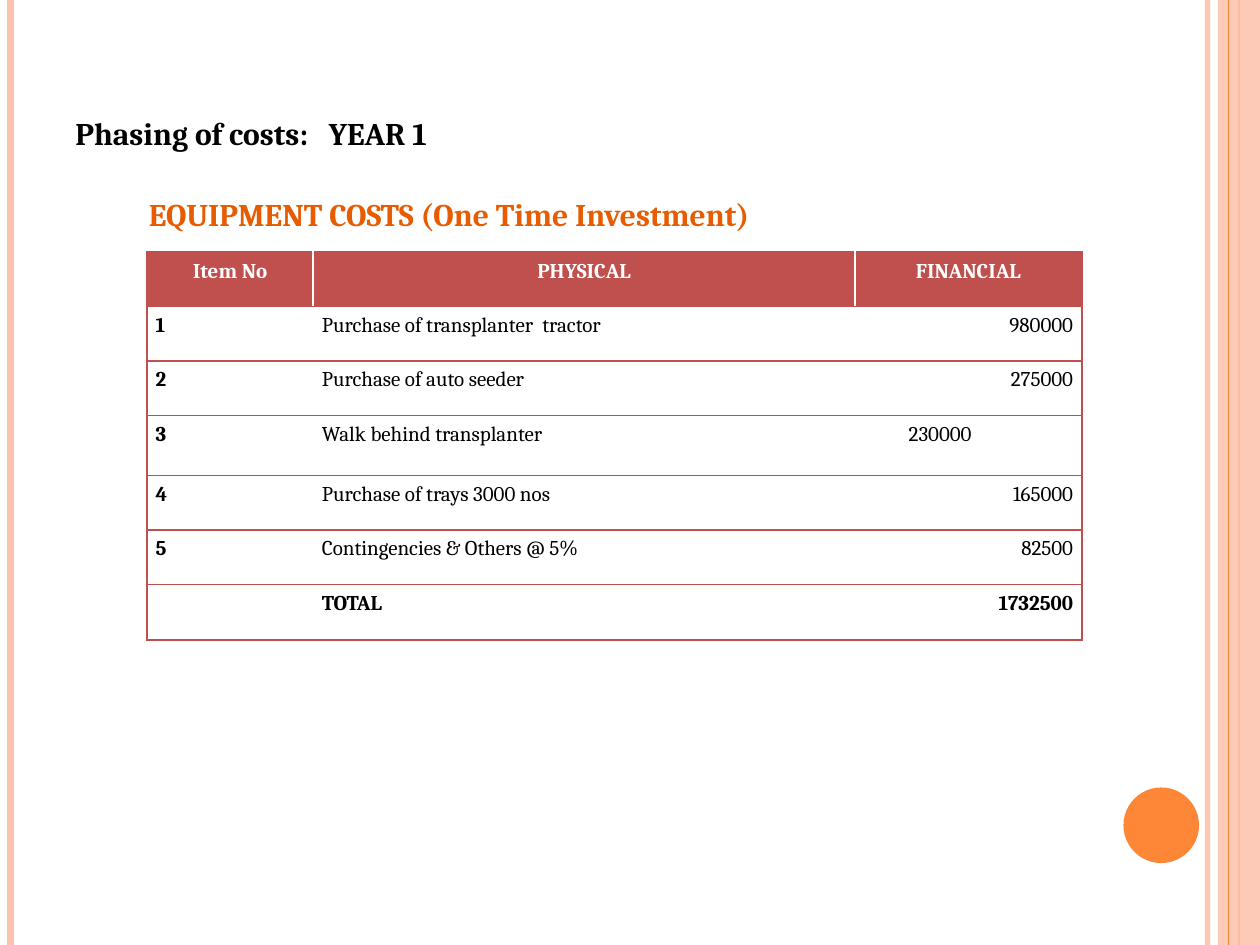
from dataclasses import dataclass

from lxml import etree
from pptx import Presentation
from pptx import util as u
from pptx.dml.color import RGBColor
from pptx.enum import shapes, text
from pptx.oxml import ns

Pt = u.Pt
ALIGN = text.PP_ALIGN


@dataclass(frozen=True)
class Theme:
    font: str = "Cambria"
    heading_size: float = 18
    table_size: float = 12
    black: str = "000000"
    white: str = "FFFFFF"
    peach: str = "FEC3AE"
    orange: str = "FE8637"
    dark_orange: str = "E75C01"
    red: str = "C0504D"


THEME = Theme()
SLIDE_WIDTH, SLIDE_HEIGHT = 720, 540
HEADER = ("Item No", "PHYSICAL", "FINANCIAL")
COSTS = (
    ("1", "Purchase of transplanter  tractor", "980000"),
    ("2", "Purchase of auto seeder", "275000"),
    ("3", "Walk behind transplanter", "230000"),
    ("4", "Purchase of trays 3000 nos", "165000"),
    ("5", "Contingencies & Others @ 5%", "82500"),
    ("", "TOTAL", "1732500"),
)
COLUMN_WIDTHS = (95, 309.6, 129.6)
ROW_HEIGHTS = (31.1, 31.1, 31.1, 34.4, 31.1, 31.1, 32)
INDENTED_AMOUNT = "230000"


def add_run(para, words, size, color, bold):
    span = para.add_run()
    span.text = words
    span.font.name = THEME.font
    span.font.size = Pt(size)
    span.font.bold = bold
    span.font.color.rgb = RGBColor.from_string(color)


def set_alpha(fill_parent, percent):
    """Make the solid colour inside an element partly transparent."""
    color = fill_parent.find(".//" + ns.qn("a:srgbClr"))
    etree.SubElement(color, ns.qn("a:alpha"), val=str(percent * 1000))


def add_rule(page, x, width, color, alpha=None):
    """Draw a vertical line over the full height of the page."""
    rule = page.shapes.add_connector(
        shapes.MSO_CONNECTOR.STRAIGHT, Pt(x), Pt(0), Pt(x), Pt(SLIDE_HEIGHT))
    rule.line.width = Pt(width)
    rule.line.color.rgb = RGBColor.from_string(color)
    properties = rule._element.spPr
    if alpha:
        set_alpha(properties, alpha)
    etree.SubElement(properties, ns.qn("a:effectLst"))


def add_filled_shape(page, kind, left, top, width, height, color, alpha=None):
    shape = page.shapes.add_shape(kind, Pt(left), Pt(top), Pt(width), Pt(height))
    shape.shadow.inherit = False
    shape.fill.solid()
    shape.fill.fore_color.rgb = RGBColor.from_string(color)
    shape.line.fill.background()
    if alpha:
        set_alpha(shape._element.spPr, alpha)


def add_decoration(page):
    add_rule(page, 690, 3, THEME.peach, alpha=93)
    add_rule(page, 6, 4.5, THEME.peach)
    add_rule(page, 708, 1.5, THEME.orange)
    add_filled_shape(page, shapes.MSO_SHAPE.RECTANGLE,
                     696, 0, 24, SLIDE_HEIGHT, THEME.peach, alpha=87)
    add_rule(page, 702, 0.75, THEME.orange)
    add_filled_shape(page, shapes.MSO_SHAPE.OVAL,
                     642, 450, 43.2, 43.2, THEME.orange)


def add_heading(page, left, top, width, height, words, color):
    box = page.shapes.add_textbox(Pt(left), Pt(top), Pt(width), Pt(height))
    frame = box.text_frame
    frame.word_wrap = True
    para = frame.paragraphs[0]
    add_run(para, words, THEME.heading_size, color, True)
    return frame


def add_tab_stop(para, position):
    stops = etree.SubElement(para._p.get_or_add_pPr(), ns.qn("a:tabLst"))
    etree.SubElement(stops, ns.qn("a:tab"), pos=str(Pt(position)), algn="l")


def add_title(page):
    frame = add_heading(page, 36, 21.6, 588, 90,
                        "Phasing of costs:\tYEAR 1", THEME.black)
    frame.vertical_anchor = text.MSO_ANCHOR.BOTTOM
    frame.margin_bottom = Pt(25)
    add_tab_stop(frame.paragraphs[0], 144.8)


def set_borders(cell, sides):
    """Draw the named sides (of L, R, T, B, in that order) in red."""
    properties = cell._tc.get_or_add_tcPr()
    for index, side in enumerate(sides):
        border = etree.Element(ns.qn("a:ln" + side), w=str(Pt(1)))
        fill = etree.SubElement(border, ns.qn("a:solidFill"))
        etree.SubElement(fill, ns.qn("a:srgbClr"), val=THEME.red)
        properties.insert(index, border)


def fill_cell(cell, words, align, color, bold):
    cell.margin_left = cell.margin_right = Pt(5)
    cell.margin_top = cell.margin_bottom = Pt(0)
    para = cell.text_frame.paragraphs[0]
    para.alignment = align
    para.line_spacing = 1.3
    if words:
        add_run(para, words, THEME.table_size, color, bold)


def add_cost_table(page):
    rows = (HEADER,) + COSTS
    frame = page.shapes.add_table(
        len(rows), len(HEADER), Pt(84), Pt(144),
        Pt(sum(COLUMN_WIDTHS)), Pt(sum(ROW_HEIGHTS)))
    table = frame.table
    for column, width in zip(table.columns, COLUMN_WIDTHS):
        column.width = Pt(width)
    for row, height in zip(table.rows, ROW_HEIGHTS):
        row.height = Pt(height)

    aligns = (ALIGN.JUSTIFY, ALIGN.JUSTIFY, ALIGN.RIGHT)
    column_borders = ("LTB", "TB", "RTB")
    for r, row in enumerate(rows):
        is_header = r == 0
        is_total = r == len(rows) - 1
        for c, words in enumerate(row):
            cell = table.cell(r, c)
            fill_cell(cell, words,
                      ALIGN.CENTER if is_header else aligns[c],
                      THEME.white if is_header else THEME.black,
                      is_header or is_total or c == 0)
            if words == INDENTED_AMOUNT:
                cell.margin_right = Pt(63)
            if is_header:
                cell.fill.solid()
                cell.fill.fore_color.rgb = RGBColor.from_string(THEME.red)
            else:
                cell.fill.background()
            set_borders(cell, column_borders[c])


def main():
    deck = Presentation()
    deck.slide_width, deck.slide_height = Pt(SLIDE_WIDTH), Pt(SLIDE_HEIGHT)
    page = deck.slides.add_slide(deck.slide_layouts[6])
    add_decoration(page)
    add_title(page)
    add_cost_table(page)
    add_heading(page, 78, 108, 435, 29,
                "EQUIPMENT COSTS (One Time Investment)", THEME.dark_orange)
    deck.save("out.pptx")


if __name__ == "__main__":
    main()
